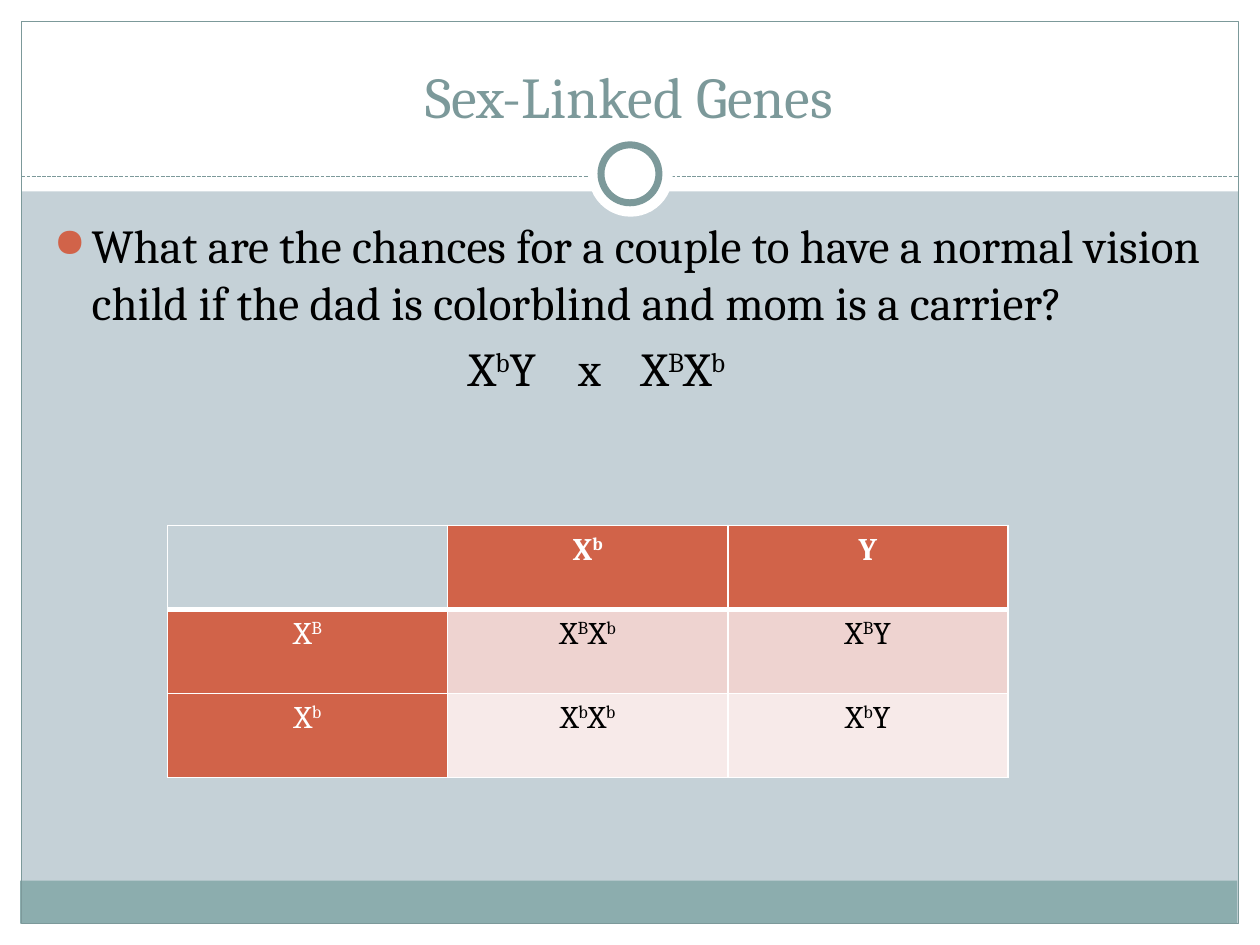
from itertools import groupby

from lxml import etree
from pptx import Presentation
from pptx.dml.color import RGBColor
from pptx.enum.dml import MSO_LINE_DASH_STYLE as DASH
from pptx.enum.shapes import MSO_CONNECTOR, MSO_SHAPE as SHAPE
from pptx.enum.text import MSO_ANCHOR, PP_ALIGN
from pptx.oxml import parse_xml
from pptx.oxml.ns import nsdecls, qn
from pptx.util import Inches, Pt

WHITE = RGBColor(0xFF, 0xFF, 0xFF)
BLACK = RGBColor(0, 0, 0)
MIST = RGBColor(0xC5, 0xD1, 0xD7)
TEAL = RGBColor(0x8C, 0xAD, 0xAE)
SLATE = RGBColor(0x7C, 0x99, 0x9A)
RUST = RGBColor(0xD1, 0x63, 0x49)
ROSE = RGBColor(0xEE, 0xD3, 0xD0)
BLUSH = RGBColor(0xF7, 0xEA, 0xE9)


def set_font(para, size, color, bold=False):
    font = para.font
    font.name, font.size, font.bold = "Cambria", Pt(size), bold
    font.color.rgb = color


def write_genotype(para, genotype):
    for is_allele, letters in groupby(genotype, lambda letter: letter in "Bb"):
        span = para.add_run()
        span.text = "".join(letters)
        if is_allele:
            span._r.get_or_add_rPr().set("baseline", "30000")


deck = Presentation()
deck.slide_width, deck.slide_height = Inches(10), Inches(7.5)
page = deck.slides.add_slide(deck.slide_layouts[5])
page.background.fill.solid()
page.background.fill.fore_color.rgb = MIST

divider = page.shapes.add_connector(
    MSO_CONNECTOR.STRAIGHT, Inches(0.17), Inches(1.4), Inches(9.83), Inches(1.4))
divider.line.color.rgb = SLATE
divider.line.width = Pt(0.75)
divider.line.dash_style = DASH.SQUARE_DOT
etree.SubElement(divider._element.spPr, qn("a:effectLst"))

decorations = [
    (SHAPE.RECTANGLE, 0, 7.33, 10, 0.17, WHITE, 0),
    (SHAPE.RECTANGLE, 0, 0, 10, 1.52, WHITE, 0),
    (SHAPE.RECTANGLE, 0, 0, 0.17, 7.5, WHITE, 0),
    (SHAPE.RECTANGLE, 9.83, 0, 0.17, 7.5, WHITE, 0),
    (SHAPE.RECTANGLE, 0.16, 6.99, 9.66, 0.34, TEAL, 0),
    (SHAPE.RECTANGLE, 0.17, 0.17, 9.66, 7.16, None, 0.75),
    (SHAPE.OVAL, 4.67, 1.05, 0.67, 0.67, WHITE, 0),
    (SHAPE.OVAL, 4.77, 1.15, 0.46, 0.46, WHITE, 4),
]
for kind, left, top, width, height, color, line_width in decorations:
    if kind == SHAPE.OVAL and not line_width:
        page.shapes._spTree.append(divider._element)
    shape = page.shapes.add_shape(
        kind, Inches(left), Inches(top), Inches(width), Inches(height))
    shape.shadow.inherit = False
    if color is None:
        shape.fill.background()
    else:
        shape.fill.solid()
        shape.fill.fore_color.rgb = color
    if line_width:
        shape.line.color.rgb = SLATE
        shape.line.width = Pt(line_width)
    else:
        shape.line.fill.background()

title = page.shapes.title
page.shapes._spTree.append(title._element)
title.left, title.top = Inches(0.33), Inches(0.25)
title.width, title.height = Inches(9.33), Inches(0.83)
title.text_frame.text = "Sex-Linked Genes"
title.text_frame.vertical_anchor = MSO_ANCHOR.BOTTOM
heading = title.text_frame.paragraphs[0]
heading.alignment = PP_ALIGN.CENTER
set_font(heading, 33, SLATE)

box = page.shapes.add_textbox(Inches(0.33), Inches(1.67), Inches(9.3), Inches(5))
box.text_frame.word_wrap = True
question = box.text_frame.paragraphs[0]
question.text = ("What are the chances for a couple to have a normal vision "
                 "child if the dad is colorblind and mom is a carrier?")
cross = box.text_frame.add_paragraph()
write_genotype(cross, "\tXbY\tx\tXBXb")
for para in (question, cross):
    para.space_before = Pt(5.4)

bullet = question._p.get_or_add_pPr()
bullet.set("marL", str(Inches(0.3)))
bullet.set("indent", str(Inches(-0.3)))
for xml in (f'<a:buClr {nsdecls("a")}><a:srgbClr val="{RUST}"/></a:buClr>',
            f'<a:buSzPct {nsdecls("a")} val="85000"/>',
            f'<a:buChar {nsdecls("a")} char="●"/>'):
    bullet.append(parse_xml(xml))
tabs = etree.SubElement(cross._p.get_or_add_pPr(), qn("a:tabLst"))
for position in (3.29, 4.16, 4.66):
    etree.SubElement(tabs, qn("a:tab"), pos=str(Inches(position)), algn="l")
for para in (question, cross):
    set_font(para, 27, BLACK)

genotypes = [["", "Xb", "Y"], ["XB", "XBXb", "XBY"], ["Xb", "XbXb", "XbY"]]
fills = [[MIST, RUST, RUST], [RUST, ROSE, ROSE], [RUST, BLUSH, BLUSH]]
punnett = page.shapes.add_table(
    3, 3, Inches(1.33), Inches(4.17), Inches(6.67), Inches(2)).table
punnett.first_row = punnett.horz_banding = False
for row in range(3):
    for column in range(3):
        cell = punnett.cell(row, column)
        cell.fill.solid()
        cell.fill.fore_color.rgb = fills[row][column]
        para = cell.text_frame.paragraphs[0]
        para.alignment = PP_ALIGN.CENTER
        write_genotype(para, genotypes[row][column])
        is_header = row == 0 or column == 0
        set_font(para, 18, WHITE if is_header else BLACK, bold=row == 0)
        for index, side in enumerate("LRTB"):
            thick = (row, side) in ((0, "B"), (1, "T"))
            cell._tc.get_or_add_tcPr().insert(index, parse_xml(
                f'<a:ln{side} {nsdecls("a")} w="{Pt(3 if thick else 1)}"><a:solidFill>'
                f'<a:srgbClr val="{WHITE}"/></a:solidFill></a:ln{side}>'))

deck.save("out.pptx")
